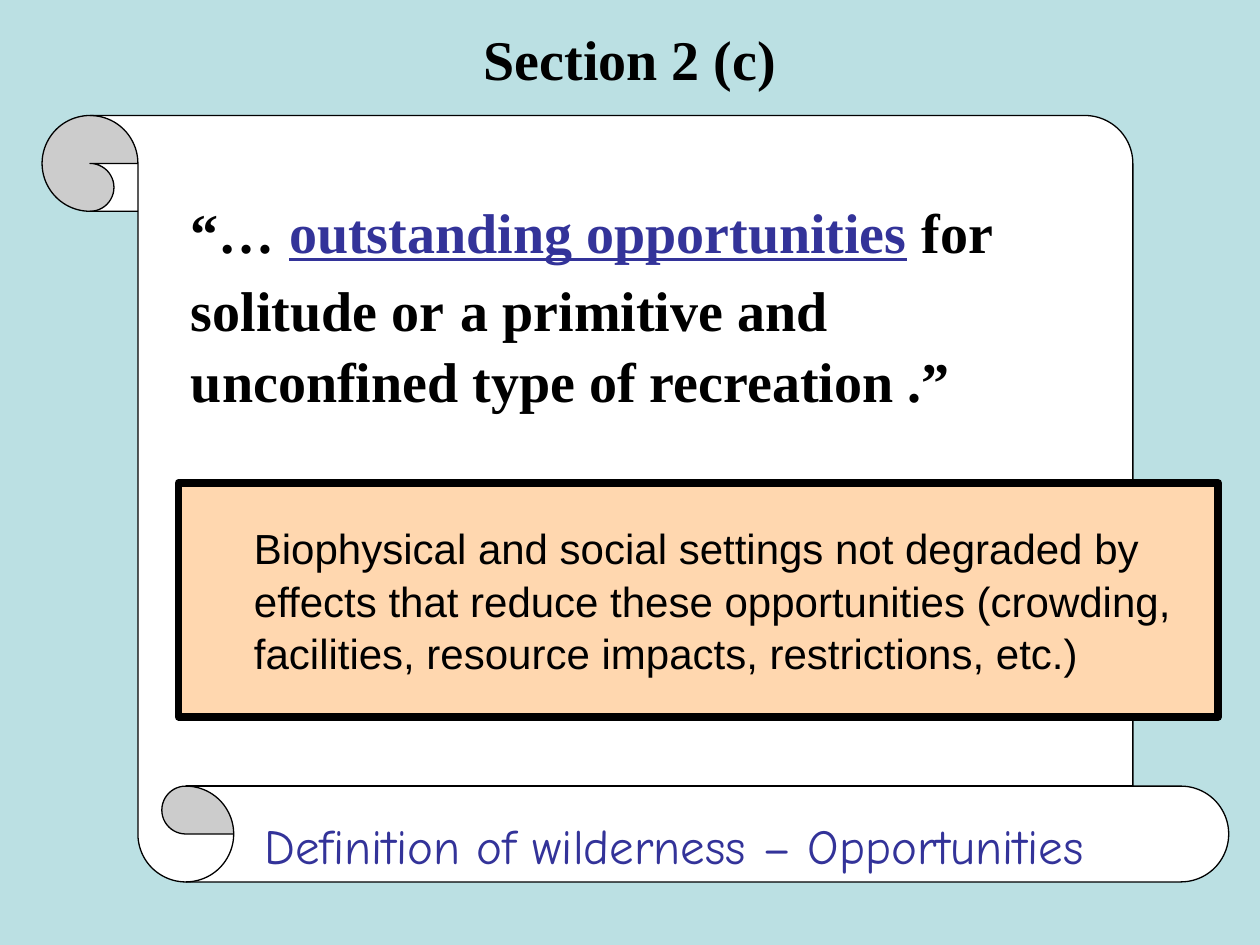
from pptx import Presentation
from pptx.dml.color import RGBColor
from pptx.enum.shapes import MSO_SHAPE as SHAPE
from pptx.enum.text import MSO_ANCHOR as ANCHOR, MSO_AUTO_SIZE as AUTO, PP_ALIGN as ALIGN
from pptx.util import Cm, Pt

SERIF, SANS, HAND = "Times New Roman", "Arial", "Comic Neue"
BLACK, WHITE, INDIGO = "000000", "FFFFFF", "333399"
SKY, PEACH = "BBE0E3", "FFD7AF"


def rgb(value):
    return RGBColor.from_string(value)


def add_run(p, text, font, size, color=BLACK, bold=False, underline=False):
    r = p.add_run()
    r.text = text
    f = r.font
    f.name, f.size, f.bold, f.underline = font, Pt(size), bold, underline
    f.color.rgb = rgb(color)


def first_paragraph(sp, align=ALIGN.LEFT, anchor=ANCHOR.TOP, spacing=1.0):
    tf = sp.text_frame
    tf.word_wrap = True
    tf.auto_size = AUTO.NONE
    tf.vertical_anchor = anchor
    p = tf.paragraphs[0]
    p.alignment = align
    p.line_spacing = spacing
    return p


def add_title(slide, text):
    sp = slide.shapes.title
    sp.left, sp.top, sp.width, sp.height = Cm(0), Cm(0), Cm(25.4), Cm(2.34)
    p = first_paragraph(sp, ALIGN.CENTER, ANCHOR.MIDDLE)
    add_run(p, text, SERIF, 32, bold=True)


def add_panel(slide, kind, box, fill, line_width):
    sp = slide.shapes.add_shape(kind, *map(Cm, box))
    sp.shadow.inherit = False
    sp.fill.solid()
    sp.fill.fore_color.rgb = rgb(fill)
    sp.line.color.rgb = rgb(BLACK)
    sp.line.width = Pt(line_width)
    return sp


def add_text(slide, box, spacing=1.0):
    return first_paragraph(slide.shapes.add_textbox(*map(Cm, box)), spacing=spacing)


def main():
    prs = Presentation()
    prs.slide_width, prs.slide_height = Cm(25.4), Cm(19.05)
    slide = prs.slides.add_slide(prs.slide_layouts[5])
    slide.background.fill.solid()
    slide.background.fill.fore_color.rgb = rgb(SKY)

    add_title(slide, "Section 2 (c)")

    # Scroll, flipped so that its long roll is at the bottom
    scroll = add_panel(slide, SHAPE.VERTICAL_SCROLL, (0.85, 2.33, 23.92, 15.45), WHITE, 0.75)
    scroll.adjustments[0] = 0.125
    scroll._element.spPr.xfrm.set("flipV", "1")

    # Quotation
    p = add_text(slide, (3.6, 3.81, 17.99, 4.49), spacing=1.04)
    add_run(p, "“… ", SERIF, 32, bold=True)
    add_run(p, "outstanding opportunities", SERIF, 32, INDIGO, bold=True, underline=True)
    add_run(p, " ", SERIF, 32, "A50021", bold=True)
    add_run(p, "for solitude or", SERIF, 32, bold=True)
    add_run(p, " ", SERIF, 36, "CC0000", bold=True)
    add_run(p, "a primitive and unconfined type of recreation .”", SERIF, 32, bold=True)

    # Explanation box
    sp = add_panel(slide, SHAPE.RECTANGLE, (3.6, 9.74, 20.96, 4.71), PEACH, 4.5)
    p = first_paragraph(sp, spacing=1.04)
    tf = sp.text_frame
    tf.margin_left = Cm(0.25)
    tf.margin_top = tf.margin_right = tf.margin_bottom = Cm(0.76)
    p.level = 1
    p.space_before = Pt(2)
    pPr = p._p.get_or_add_pPr()
    pPr.set("marL", str(Cm(1.27)))
    pPr.set("indent", "0")
    add_run(p, "Biophysical and social settings not degraded by effects that reduce these "
               "opportunities (crowding, facilities, resource impacts, restrictions, etc.)", SANS, 24)

    # Caption on the lower roll
    p = add_text(slide, (5.08, 16.31, 19.05, 1.45))
    add_run(p, "Definition of wilderness – Opportunities", HAND, 28, INDIGO)

    prs.save("out.pptx")


if __name__ == "__main__":
    main()
